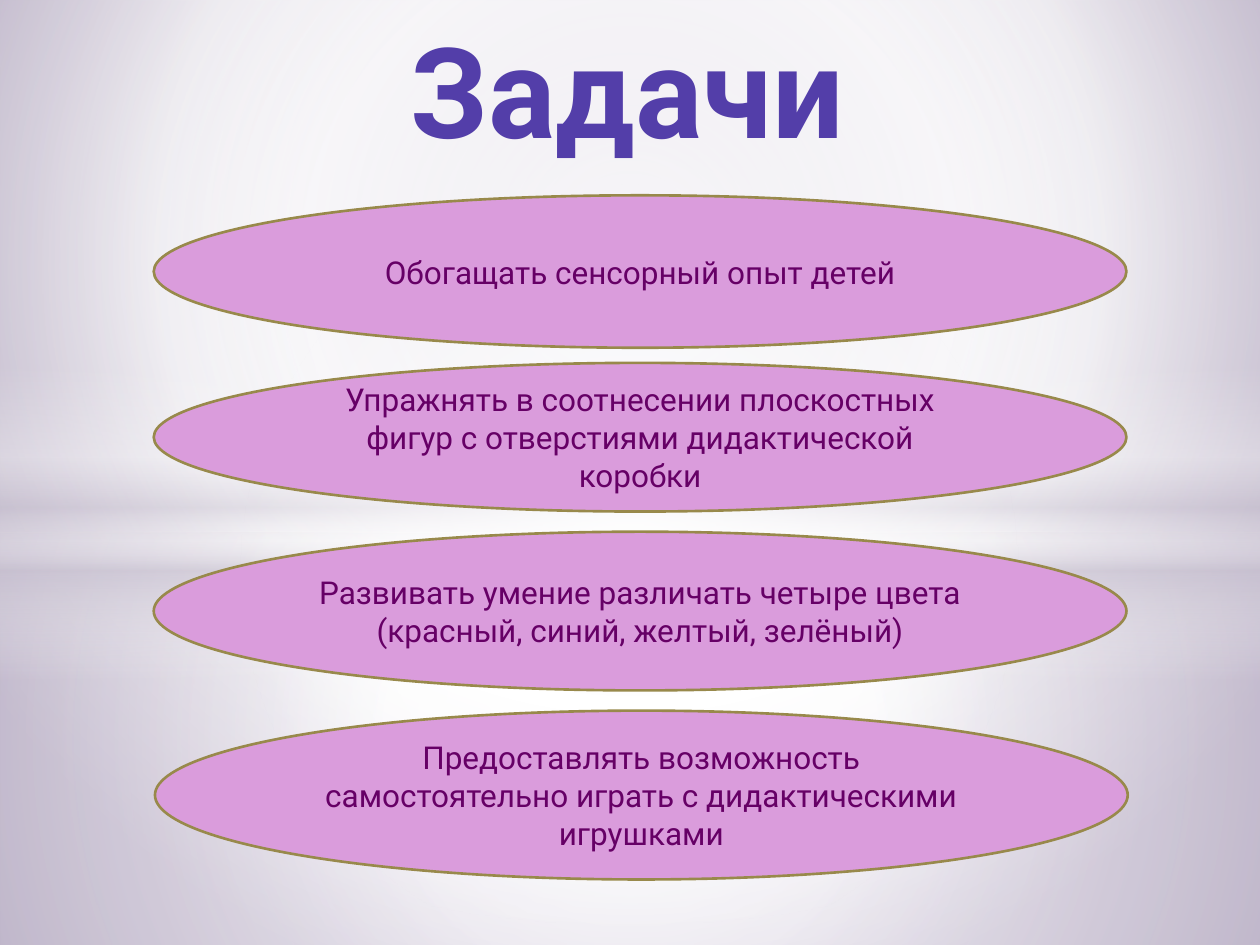
from dataclasses import dataclass

from pptx import Presentation
from pptx.dml.color import RGBColor
from pptx.enum.shapes import MSO_SHAPE
from pptx.enum.text import MSO_ANCHOR, PP_ALIGN
from pptx.oxml import parse_xml
from pptx.oxml.ns import nsdecls, qn
from pptx.util import Inches, Pt

RECT, OVAL = MSO_SHAPE.RECTANGLE, MSO_SHAPE.OVAL
MIDDLE, CENTER = MSO_ANCHOR.MIDDLE, PP_ALIGN.CENTER
FONT = "Roboto"
INDIGO = RGBColor(0x53, 0x3E, 0xA9)
PURPLE = RGBColor(0x66, 0x00, 0x66)
ORCHID = RGBColor(0xDA, 0x9C, 0xDC)
OLIVE = RGBColor(0x98, 0x89, 0x4B)
WHITE = RGBColor(0xFF, 0xFF, 0xFF)
MIST = RGBColor(0xC9, 0xC2, 0xD1)
LILAC = RGBColor(0xC1, 0xB7, 0xCD)
MAUVE = RGBColor(0xA1, 0x91, 0xB5)
LINEAR = '<a:lin ang="5400000" scaled="0"/>'


@dataclass
class Stop:
    position: int
    color: RGBColor
    opacity: int = 100


@dataclass
class Glow:
    shape: int
    top: float
    height: float
    stops: list[Stop]
    direction: str


@dataclass
class Task:
    top: float
    height: float
    text: str
    left: float = 1.22


def radial(left: int, top: int, right: int, bottom: int) -> str:
    return (f'<a:path path="circle"><a:fillToRect l="{left}000" t="{top}000" '
            f'r="{right}000" b="{bottom}000"/></a:path>')


CENTRED = radial(50, 50, 50, 50)
BACKGROUND = [Stop(0, LILAC), Stop(60, WHITE), Stop(100, MAUVE)]
GLOWS = [
    Glow(RECT, 4.23, 3.27, [Stop(0, WHITE, 91), Stop(37, WHITE, 76), Stop(100, MIST, 79)], CENTRED),
    Glow(RECT, 0, 4.23, [Stop(0, WHITE, 89), Stop(48, WHITE, 62), Stop(100, MIST, 79)], CENTRED),
    Glow(RECT, 2.9, 2.5, [Stop(0, WHITE, 0), Stop(29, WHITE, 30), Stop(45, MIST, 40),
                          Stop(55, WHITE, 26), Stop(65, MIST, 60), Stop(100, WHITE, 0)], LINEAR),
    Glow(OVAL, 1.75, 5.58, [Stop(0, WHITE), Stop(54, WHITE, 0)], CENTRED),
]
TASKS = [
    Task(1.55, 1.21, "Обогащать сенсорный опыт детей"),
    Task(2.88, 1.18, "Упражнять в соотнесении плоскостных фигур с отверстиями дидактической коробки"),
    Task(4.22, 1.26, "Развивать умение различать четыре цвета (красный, синий, желтый, зелёный)"),
    Task(5.64, 1.34, "Предоставлять возможность самостоятельно играть с дидактическими игрушками", 1.23),
]


def set_gradient(owner, properties, stops: list[Stop], direction: str) -> None:
    owner.fill.solid()
    owner.fill.fore_color.rgb = WHITE
    gs = "".join(
        f'<a:gs pos="{stop.position * 1000}"><a:srgbClr val="{stop.color}">'
        f'<a:alpha val="{stop.opacity * 1000}"/></a:srgbClr></a:gs>'
        for stop in stops
    )
    gradient = parse_xml(f'<a:gradFill {nsdecls("a")} rotWithShape="1">'
                         f'<a:gsLst>{gs}</a:gsLst>{direction}</a:gradFill>')
    properties.replace(properties.find(qn("a:solidFill")), gradient)


def write(sp, text: str, size: int, color: RGBColor, bold: bool = False):
    tf = sp.text_frame
    tf.word_wrap = True
    tf.vertical_anchor = MIDDLE
    p = tf.paragraphs[0]
    p.text = text
    p.alignment = CENTER
    p.font.name = FONT
    p.font.size = Pt(size)
    p.font.bold = bold
    p.font.color.rgb = color
    return p


def add_glow(s, glow: Glow) -> None:
    sp = s.shapes.add_shape(glow.shape, 0, Inches(glow.top), Inches(10), Inches(glow.height))
    sp.shadow.inherit = False
    sp.line.fill.background()
    set_gradient(sp, sp._element.spPr, glow.stops, glow.direction)


def add_title(s, text: str) -> None:
    sp = s.shapes.add_textbox(Inches(1.14), 0, Inches(7.48), Inches(1.39))
    p = write(sp, text, 72, INDIGO, bold=True)
    p._p.get_or_add_pPr().set("marL", str(Inches(0.2)))


def add_task(s, task: Task) -> None:
    sp = s.shapes.add_shape(OVAL, Inches(task.left), Inches(task.top), Inches(7.72), Inches(task.height))
    sp.shadow.inherit = False
    sp.fill.solid()
    sp.fill.fore_color.rgb = ORCHID
    sp.line.color.rgb = OLIVE
    sp.line.width = Pt(1.5)
    write(sp, task.text, 18, PURPLE)


def main() -> None:
    prs = Presentation()
    prs.slide_width, prs.slide_height = Inches(10), Inches(7.5)
    s = prs.slides.add_slide(prs.slide_layouts[6])
    bg = s.background
    bg.fill.solid()
    set_gradient(bg, s._element.cSld.bg.bgPr, BACKGROUND, radial(20, 10, 20, 60))
    for glow in GLOWS:
        add_glow(s, glow)
    add_title(s, "Задачи")
    for task in TASKS:
        add_task(s, task)
    prs.save("out.pptx")


if __name__ == "__main__":
    main()
